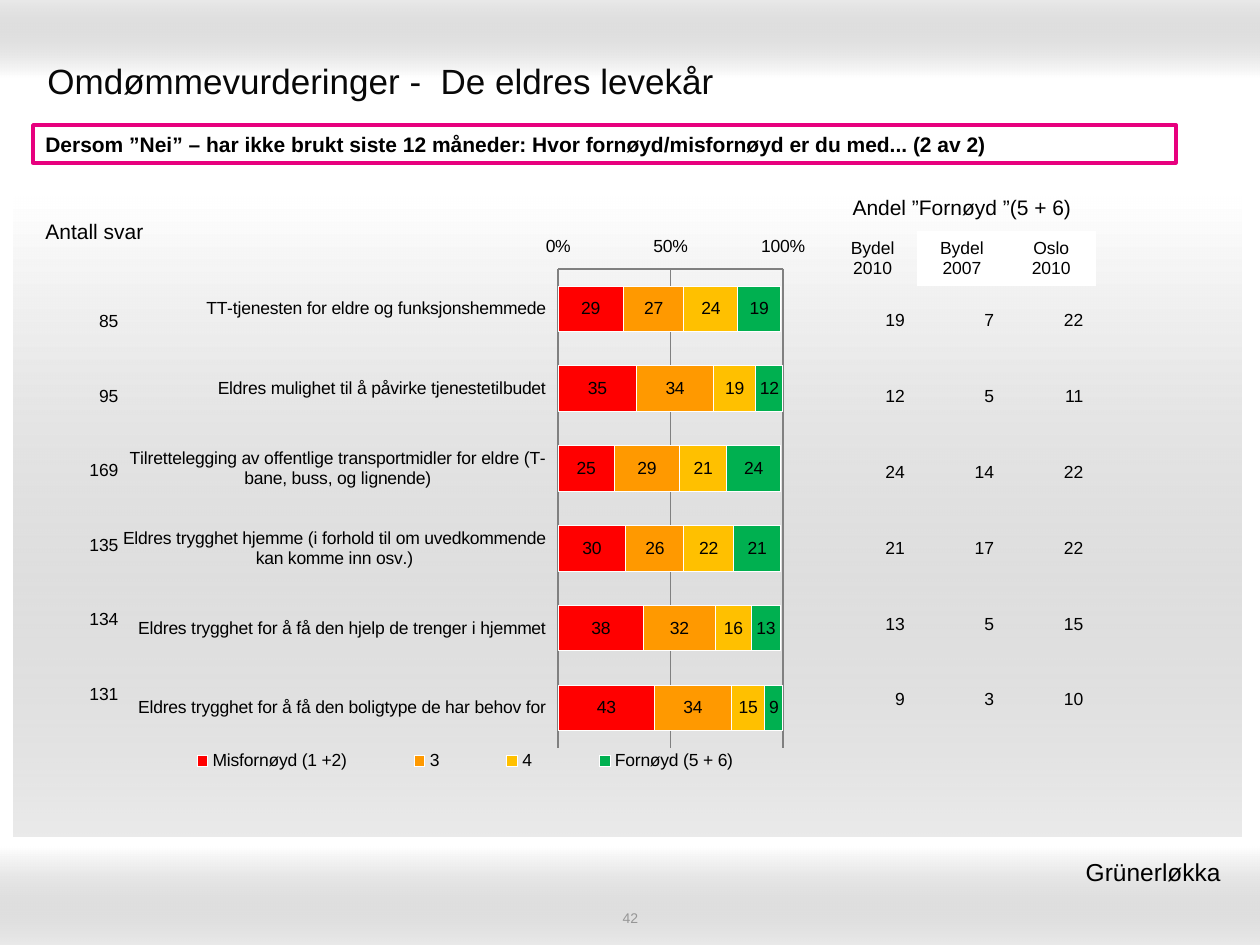
from lxml import etree
from pptx import Presentation
from pptx.chart.data import CategoryChartData
from pptx.dml.color import RGBColor
from pptx.enum.chart import XL_CHART_TYPE, XL_LEGEND_POSITION, XL_TICK_LABEL_POSITION, XL_TICK_MARK
from pptx.enum.shapes import MSO_SHAPE
from pptx.enum.text import MSO_ANCHOR, PP_ALIGN
from pptx.oxml import parse_xml
from pptx.oxml.ns import nsdecls, qn
from pptx.util import Pt

RECTANGLE = MSO_SHAPE.RECTANGLE
BAR_STACKED = XL_CHART_TYPE.BAR_STACKED
LEGEND_BOTTOM = XL_LEGEND_POSITION.BOTTOM
LABELS_LOW = XL_TICK_LABEL_POSITION.LOW
TICK_NONE, TICK_INSIDE = XL_TICK_MARK.NONE, XL_TICK_MARK.INSIDE
LEFT, CENTER, RIGHT = PP_ALIGN.LEFT, PP_ALIGN.CENTER, PP_ALIGN.RIGHT
TOP, MIDDLE = MSO_ANCHOR.TOP, MSO_ANCHOR.MIDDLE

EMU_PER_PX = 914400 / 126
PLAIN_TABLE = "{2D5ABB26-0587-4C30-8999-92F81FD0307C}"
BLACK, WHITE, GREY = "000000", "FFFFFF", "808080"

CATEGORIES = [
    "TT-tjenesten for eldre og funksjonshemmede",
    "Eldres mulighet til å påvirke tjenestetilbudet",
    "Tilrettelegging av offentlige transportmidler for eldre (T-bane, buss, og lignende)",
    "Eldres trygghet hjemme (i forhold til om uvedkommende kan komme inn osv.)",
    "Eldres trygghet for å få den hjelp de trenger i hjemmet",
    "Eldres trygghet for å få den boligtype de har behov for",
]
SERIES = [
    ("Misfornøyd (1 +2)", "FF0000", (29, 35, 25, 30, 38, 43)),
    ("3", "FF9900", (27, 34, 29, 26, 32, 34)),
    ("4", "FFC000", (24, 19, 21, 22, 16, 15)),
    ("Fornøyd (5 + 6)", "00B050", (19, 12, 24, 21, 13, 9)),
]
SATISFIED = [(19, 7, 22), (12, 5, 11), (24, 14, 22), (21, 17, 22), (13, 5, 15), (9, 3, 10)]
ANSWERS = [(85,), (95,), (169,), (135,), (134,), (131,)]


def px(length):
    return round(length * EMU_PER_PX)


def color(value):
    return RGBColor.from_string(value)


class SlideBuilder:
    font_name = "Arial"

    def __init__(self, slide):
        self.slide = slide

    def format_text(self, text_frame, size, text_color=BLACK, bold=False, align=LEFT):
        for paragraph in text_frame.paragraphs:
            paragraph.alignment = align
            for run in paragraph.runs:
                self.format_font(run.font, size, text_color, bold)

    def format_font(self, font, size, text_color=BLACK, bold=False):
        font.name, font.size, font.bold = self.font_name, Pt(size), bold
        font.color.rgb = color(text_color)

    def gradient_band(self, left, top, width, height, angle):
        shape = self.slide.shapes.add_shape(RECTANGLE, *map(px, (left, top, width, height)))
        shape.shadow.inherit = False
        shape.line.fill.background()
        shape.fill.gradient()
        shape.fill.gradient_angle = angle
        start, end = shape.fill.gradient_stops
        start.position, end.position = 0, 1
        start.color.rgb, end.color.rgb = color(WHITE), color("999999")
        last_color = list(shape._element.iter(qn("a:srgbClr")))[-1]
        etree.SubElement(last_color, qn("a:alpha"), val="20000")

    def text(self, content, left, top, width, height, size, text_color=BLACK, align=LEFT, anchor=TOP):
        shape = self.slide.shapes.add_textbox(*map(px, (left, top, width, height)))
        frame = shape.text_frame
        frame.word_wrap = True
        frame.vertical_anchor = anchor
        frame.text = content
        self.format_text(frame, size, text_color, align=align)

    def outlined_box(self, content, left, top, width, height, size, line_color):
        shape = self.slide.shapes.add_shape(RECTANGLE, *map(px, (left, top, width, height)))
        shape.shadow.inherit = False
        shape.fill.solid()
        shape.fill.fore_color.rgb = color(WHITE)
        shape.line.color.rgb = color(line_color)
        shape.line.width = Pt(2)
        shape.text_frame.word_wrap = True
        shape.text_frame.text = content
        self.format_text(shape.text_frame, size, bold=True)

    def table(self, rows, left, top, width, height, align, size=10):
        frame = self.slide.shapes.add_table(
            len(rows), len(rows[0]), *map(px, (left, top, width, height)))
        table = frame.table
        table.first_row = table.horz_banding = False
        table._tbl.tblPr.find(qn("a:tableStyleId")).text = PLAIN_TABLE
        for row_index, row in enumerate(rows):
            for column_index, value in enumerate(row):
                cell = table.cell(row_index, column_index)
                cell.text = str(value)
                cell.vertical_anchor = MIDDLE
                cell.fill.background()
                self.format_text(cell.text_frame, size, align=align)
        return table

    def set_layout(self, element, index, frame, area, target=""):
        for old in element.findall(qn("c:layout")):
            element.remove(old)
        left, top, width, height = (
            round(length / total, 4) for length, total in zip(area, frame * 2))
        element.insert(index, parse_xml(
            f'<c:layout {nsdecls("c")}><c:manualLayout>{target}'
            '<c:xMode val="edge"/><c:yMode val="edge"/>'
            f'<c:x val="{left}"/><c:y val="{top}"/><c:w val="{width}"/><c:h val="{height}"/>'
            '</c:manualLayout></c:layout>'))

    def stacked_bars(self, left, top, width, height, plot_area, legend_area):
        data = CategoryChartData()
        data.categories = CATEGORIES
        for name, _, values in SERIES:
            data.add_series(name, values)
        chart = self.slide.shapes.add_chart(
            BAR_STACKED, *map(px, (left, top, width, height)), data).chart
        chart.has_title = False
        self.format_font(chart.font, 10)
        plot = chart.plots[0]
        plot.gap_width, plot.overlap = 75, 100
        plot.vary_by_categories = False
        for series, (_, fill_color, _) in zip(plot.series, SERIES):
            series.format.fill.solid()
            series.format.fill.fore_color.rgb = color(fill_color)
            series.format.line.color.rgb = color(WHITE)
            labels = series.data_labels
            labels.show_value = True
            labels.number_format, labels.number_format_is_linked = "0", False
            self.format_font(labels.font, 10)
        category_axis, value_axis = chart.category_axis, chart.value_axis
        category_axis.reverse_order = True
        category_axis.major_tick_mark = TICK_NONE
        value_axis.major_tick_mark = TICK_INSIDE
        value_axis.minimum_scale, value_axis.maximum_scale = 0, 100
        value_axis.major_unit = 50
        value_axis.tick_labels.number_format = "General\\%"
        value_axis.tick_labels.number_format_is_linked = False
        value_axis.major_gridlines.format.line.color.rgb = color(GREY)
        for axis in (category_axis, value_axis):
            axis.tick_label_position = LABELS_LOW
            axis.format.line.color.rgb = color(GREY)
            self.format_font(axis.tick_labels.font, 10)
            body = axis._element.find(qn("c:txPr")).find(qn("a:bodyPr"))
            body.set("rot", "0")
            body.set("vert", "horz")
        chart.has_legend = True
        chart.legend.position = LEGEND_BOTTOM
        chart.legend.include_in_layout = False
        frame = (width, height)
        self.set_layout(chart._chartSpace.chart.plotArea, 0, frame, plot_area,
                        '<c:layoutTarget val="inner"/>')
        self.set_layout(chart.legend._element, 1, frame, legend_area)


def main():
    presentation = Presentation()
    presentation.slide_width, presentation.slide_height = px(1260), px(945)
    builder = SlideBuilder(presentation.slides.add_slide(presentation.slide_layouts[6]))

    builder.gradient_band(0, 0, 1260, 78, 90)
    builder.gradient_band(0, 847, 1260, 98, 270)
    builder.gradient_band(14, 197, 1227, 640, 270)
    builder.text("Omdømmevurderinger -  De eldres levekår", 35, 46, 1190, 70, 20, "080808", anchor=MIDDLE)
    builder.text("42", 431, 909, 399, 18, 8, "969696", CENTER, MIDDLE)
    builder.outlined_box(
        "Dersom ”Nei” – har ikke brukt siste 12 måneder: Hvor fornøyd/misfornøyd er du med... (2 av 2)",
        33, 125, 1143, 38, 12, "E7007E")
    builder.stacked_bars(123, 226, 694, 572, (435, 43, 225, 479), (12, 521, 660, 28))
    builder.table(SATISFIED, 828, 282, 268, 456, RIGHT)

    header = builder.table(
        [("Andel ”Fornøyd ”(5 + 6)", "", ""), ("Bydel\n2010", "Bydel\n2007", "Oslo\n2010")],
        828, 185, 268, 101, CENTER)
    header.rows[0].height, header.rows[1].height = px(46), px(55)
    heading = header.cell(0, 0)
    heading.merge(header.cell(0, 2))
    builder.format_text(heading.text_frame, 12, align=CENTER)
    for column in (1, 2):
        fill = header.cell(1, column).fill
        fill.solid()
        fill.fore_color.rgb = color(WHITE)

    builder.table(ANSWERS, 65, 284, 66, 448, RIGHT)
    builder.table([("Antall svar",)], 5, 195, 179, 74, CENTER, 12)
    builder.text("Grünerløkka ", 769, 851, 471, 43, 14, align=RIGHT)
    presentation.save("out.pptx")


if __name__ == "__main__":
    main()
